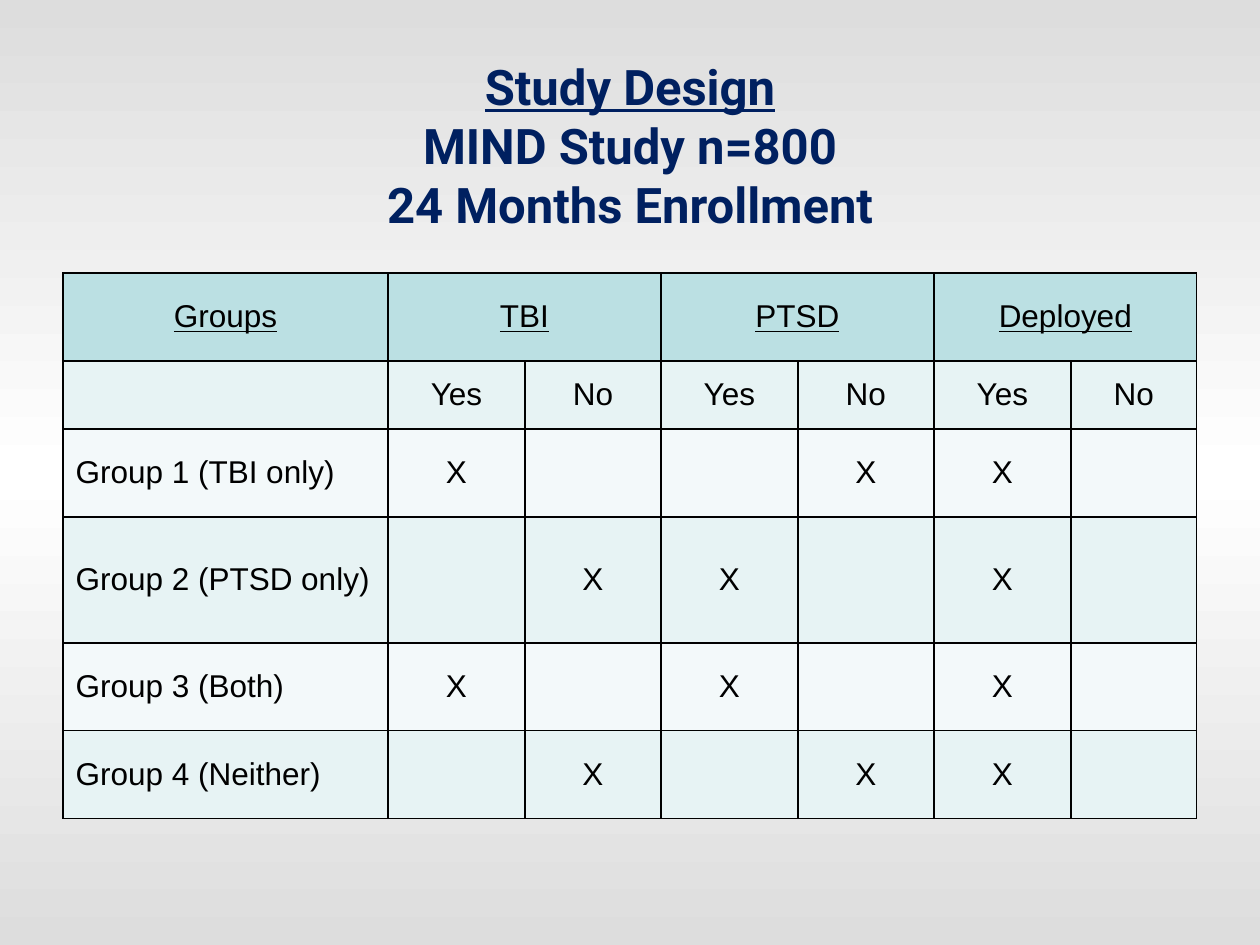
from copy import deepcopy

from pptx import Presentation
from pptx.dml.color import RGBColor
from pptx.enum.text import MSO_ANCHOR as ANCHOR, PP_ALIGN as ALIGN
from pptx.oxml import parse_xml
from pptx.oxml.ns import nsdecls, qn
from pptx.util import Pt

# Content
TITLE = ["Study Design", "MIND Study n=800", "24 Months Enrollment"]
FACTORS = ["TBI", "PTSD", "Deployed"]
ANSWERS = ["Yes", "No"]
GROUPS = [  # label, then yes or no for each factor
    ("Group 1 (TBI only)", (True, False, True)),
    ("Group 2 (PTSD only)", (False, True, True)),
    ("Group 3 (Both)", (True, True, True)),
    ("Group 4 (Neither)", (False, False, True)),
]

# Layout in px, 126 to the inch
PX = 914400 // 126
SIZE = (1260, 945)
TITLE_BOX = (63, 38, 1134, 214)
TABLE_POS = (63, 273)
COLS = [325, 137, 136, 137, 136, 137, 126]
ROWS = [88, 68, 88, 126, 88, 88]

COLORS = {"edge": "DDDDDD", "middle": "FFFFFF", "title": "002060", "text": "000000",
          "header": "BBE0E3", "dark": "E7F3F4", "light": "F3F9FA", "border": "000000"}
TITLE_FONT = {"name": "Roboto", "size": Pt(28), "bold": True}
CELL_FONT = {"name": "Arial", "size": Pt(18), "bold": False}


def rgb(key):
    return RGBColor.from_string(COLORS[key])


def set_font(font, values, color, underline=False):
    for name, value in values.items():
        setattr(font, name, value)
    font.underline = underline
    font.color.rgb = rgb(color)


def add_borders(cell):
    props = cell._tc.get_or_add_tcPr()
    for i, side in enumerate(("lnL", "lnR", "lnT", "lnB")):
        props.insert(i, parse_xml(
            f'<a:{side} {nsdecls("a")} w="{Pt(1)}"><a:solidFill>'
            f'<a:srgbClr val="{COLORS["border"]}"/></a:solidFill></a:{side}>'))


def table_rows():
    header, answers = ["Groups"], [""]
    for factor in FACTORS:
        header += [factor, ""]
        answers += ANSWERS
    rows = [header, answers]
    for label, flags in GROUPS:
        marks = [m for f in flags for m in (("X", "") if f else ("", "X"))]
        rows.append([label] + marks)
    return rows


def add_background(s):
    fill = s.background.fill
    fill.gradient()
    fill.gradient_angle = 270
    first = next(s.element.iter(qn("a:gs")))
    first.addnext(deepcopy(first))
    for stop, pos, key in zip(fill.gradient_stops, (0, 0.5, 1), ("edge", "middle", "edge")):
        stop.position = pos
        stop.color.rgb = rgb(key)


def add_title(s):
    tf = s.shapes.add_textbox(*(v * PX for v in TITLE_BOX)).text_frame
    tf.word_wrap = True
    tf.vertical_anchor = ANCHOR.MIDDLE
    p = tf.paragraphs[0]
    p.alignment = ALIGN.CENTER
    for i, line in enumerate(TITLE):
        if i:
            p.add_line_break()
        r = p.add_run()
        r.text = line
        set_font(r.font, TITLE_FONT, "title", underline=i == 0)


def add_design_table(s):
    box = [v * PX for v in (*TABLE_POS, sum(COLS), sum(ROWS))]
    table = s.shapes.add_table(len(ROWS), len(COLS), *box).table
    table.first_row = table.horz_banding = False
    for col, width in zip(table.columns, COLS):
        col.width = width * PX
    for row, height in zip(table.rows, ROWS):
        row.height = height * PX

    for i, values in enumerate(table_rows()):
        for j, value in enumerate(values):
            cell = table.cell(i, j)
            cell.vertical_anchor = ANCHOR.MIDDLE
            cell.fill.solid()
            cell.fill.fore_color.rgb = rgb("header" if i == 0 else "dark" if i % 2 else "light")
            add_borders(cell)
            if value:
                p = cell.text_frame.paragraphs[0]
                p.alignment = ALIGN.LEFT if j == 0 and i > 1 else ALIGN.CENTER
                r = p.add_run()
                r.text = value
                set_font(r.font, CELL_FONT, "text", underline=i == 0)

    # Each factor spans its answer columns
    for j in range(1, len(COLS), len(ANSWERS)):
        table.cell(0, j).merge(table.cell(0, j + len(ANSWERS) - 1))


def main():
    prs = Presentation()
    prs.slide_width, prs.slide_height = (v * PX for v in SIZE)
    s = prs.slides.add_slide(prs.slide_layouts[6])
    add_background(s)
    add_title(s)
    add_design_table(s)
    prs.save("out.pptx")


if __name__ == "__main__":
    main()
